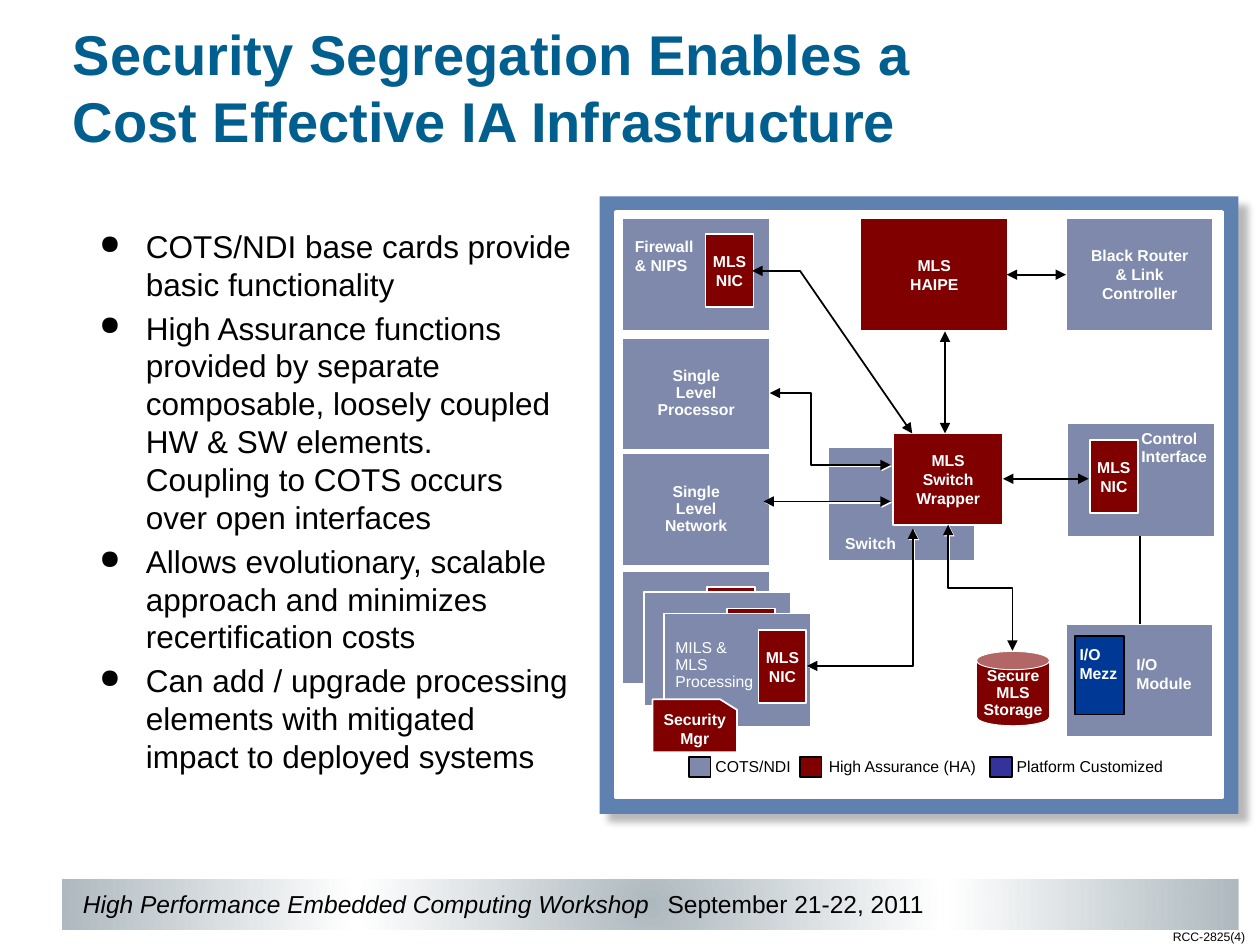
from dataclasses import dataclass

from lxml.etree import SubElement as Sub
from pptx import Presentation
from pptx.dml.color import RGBColor as Rgb
from pptx.enum.shapes import MSO_CONNECTOR as Conn, MSO_SHAPE as Kind
from pptx.enum.text import MSO_ANCHOR as Anchor, PP_ALIGN as Align
from pptx.oxml.ns import qn
from pptx.util import Inches, Pt

HUES = {
    "cots": "7E89AB", "high": "800000", "plat": "333399", "mezz": "003896",
    "frame": "5E81B0", "title": "005F8E", "steel": "AEB9BF",
    "white": "FFFFFF", "black": "000000",
}


@dataclass
class Box:
    """A filled shape or, without fill, a plain text box."""
    left: float
    top: float
    wide: float
    high: float
    fill: str = ""
    text: str = ""
    edge: str = "white"
    line: float = 1
    kind: Kind = Kind.RECTANGLE
    size: float = 9
    hue: str = "white"
    bold: bool = True
    align: Align = Align.LEFT
    mid: bool = False
    wrap: bool = True
    pad: tuple = (0.1, 0.05)
    space: float = 1


@dataclass
class Link:
    """A connector, given by its unrotated frame corners."""
    x1: float
    y1: float
    x2: float
    y2: float
    heads: bool = True
    glow: bool = False
    form: str = "line"
    turn: int = 0
    flip: bool = False
    bend: int = 50000


def tint(hue: str) -> Rgb:
    """Look up a colour."""
    return Rgb.from_string(HUES[hue])


def add_run(para, text: str, size: float, hue: str, bold=False, slant=False) -> None:
    """Add one styled run."""
    run = para.add_run()
    run.text = text
    font = run.font
    font.name, font.size, font.bold, font.italic = "Arial", Pt(size), bold, slant
    font.color.rgb = tint(hue)


def add_lines(para, text: str, size: float, hue: str, bold=False) -> None:
    """Add runs parted by line breaks."""
    for num, part in enumerate(text.split("\v")):
        if num:
            para.add_line_break()
        add_run(para, part, size, hue, bold)


def shade(shape, hue: str, alpha: int, blur: float, dist: float) -> None:
    """Cast an outer shadow to the lower right."""
    props = shape._element.spPr
    glow = props.find(qn("a:effectLst"))
    if glow is None:
        glow = Sub(props, qn("a:effectLst"))
    cast = Sub(glow, qn("a:outerShdw"), blurRad=str(Pt(blur)), dist=str(Pt(dist)),
               dir="2700000", algn="ctr", rotWithShape="0")
    color = Sub(cast, qn("a:srgbClr"), val=HUES[hue])
    Sub(color, qn("a:alpha"), val=str(alpha * 1000))


def add_box(shapes, box: Box):
    """Draw a box with its text."""
    frame = [Inches(v) for v in (box.left, box.top, box.wide, box.high)]
    if box.fill:
        shape = shapes.add_shape(box.kind, *frame)
        shape.shadow.inherit = False
        shape.fill.solid()
        shape.fill.fore_color.rgb = tint(box.fill)
        if box.edge:
            shape.line.color.rgb = tint(box.edge)
            shape.line.width = Pt(box.line)
        else:
            shape.line.fill.background()
    else:
        shape = shapes.add_textbox(*frame)
    body = shape.text_frame
    body.word_wrap = box.wrap
    body.vertical_anchor = Anchor.MIDDLE if box.mid else Anchor.TOP
    body.margin_left = body.margin_right = Inches(box.pad[0])
    body.margin_top = body.margin_bottom = Inches(box.pad[1])
    for num, row in enumerate(box.text.split("\n") if box.text else []):
        para = body.add_paragraph() if num else body.paragraphs[0]
        para.alignment, para.line_spacing = box.align, box.space
        add_lines(para, row, box.size, box.hue, box.bold)
    return shape


def ink(line, heads: bool) -> None:
    """Style a black line, with arrowheads if wanted."""
    line.color.rgb, line.width = tint("black"), Pt(1)
    if heads:
        for end in ("a:headEnd", "a:tailEnd"):
            Sub(line._get_or_add_ln(), qn(end), type="triangle")


def add_link(shapes, link: Link) -> None:
    """Draw a straight or bent connector."""
    ends = [Inches(v) for v in (link.x1, link.y1, link.x2, link.y2)]
    form = Conn.STRAIGHT if link.form == "line" else Conn.ELBOW
    wire = shapes.add_connector(form, *ends)
    props = wire._element.spPr
    if link.turn:
        props.xfrm.set("rot", str(link.turn * 60000))
    if link.flip:
        props.xfrm.set("flipV", "1")
    if link.form != "line":
        geom = props.find(qn("a:prstGeom"))
        geom.set("prst", link.form)
        if link.form == "bentConnector3":
            Sub(geom.find(qn("a:avLst")), qn("a:gd"), name="adj1", fmla=f"val {link.bend}")
    ink(wire.line, link.heads)
    Sub(props, qn("a:effectLst"))
    if link.glow:
        shade(wire, "white", 100, 0, 1)


def card(left: float, top: float, text="", fill="cots", high=0.9, **more) -> Box:
    """Describe a standard module card."""
    return Box(left, top, 1.17, high, fill, text, align=Align.CENTER, mid=True, wrap=False, **more)


def nic(left: float, top: float, text="MLS\nNIC") -> Box:
    """Describe a network card."""
    return Box(left, top, 0.38, 0.58, "high", text, align=Align.CENTER, mid=True, wrap=False)


def label(left: float, top: float, wide: float, text: str, **more) -> Box:
    """Describe a free label."""
    return Box(left, top, wide, 0.4, text=text, **more)


def add_foot(shapes) -> None:
    """Draw the footer band and its text."""
    band = add_box(shapes, Box(0.49, 6.98, 9.34, 0.4, "steel", edge=""))
    props = band._element.spPr
    solid = props.find(qn("a:solidFill"))
    grad = Sub(props, qn("a:gradFill"), rotWithShape="1")
    props.replace(solid, grad)
    stops = Sub(grad, qn("a:gsLst"))
    for pos, hue in ((0, "steel"), (50, "white"), (100, "steel")):
        stop = Sub(stops, qn("a:gs"), pos=str(pos * 1000))
        Sub(stop, qn("a:srgbClr"), val=HUES[hue])
    ring = Sub(grad, qn("a:path"), path="circle")
    Sub(ring, qn("a:fillToRect"), **dict.fromkeys("ltrb", "50000"))
    para = add_box(shapes, Box(0.56, 7.01, 7.03, 0.34)).text_frame.paragraphs[0]
    tabs = Sub(para._p.get_or_add_pPr(), qn("a:tabLst"))
    Sub(tabs, qn("a:tab"), pos=str(Inches(4.64)), algn="l")
    add_run(para, "High Performance Embedded Computing Workshop", 14, "black", slant=True)
    add_run(para, "\tSeptember 21-22, 2011", 14, "black")
    add_box(shapes, label(9.21, 7.33, 0.85, "RCC-2825(4)", size=7, hue="black", bold=False, wrap=False))


def add_points(shapes, points: list[str]) -> None:
    """Write the bullet list."""
    body = add_box(shapes, Box(0.69, 1.75, 3.97, 4.92)).text_frame
    for num, text in enumerate(points):
        para = body.add_paragraph() if num else body.paragraphs[0]
        if num:
            para.space_before = Pt(3.6)
        props = para._p.get_or_add_pPr()
        props.set("marL", str(Inches(0.37)))
        props.set("indent", str(-Inches(0.37)))
        Sub(Sub(props, qn("a:buClr")), qn("a:srgbClr"), val=HUES["black"])
        Sub(props, qn("a:buSzPct"), val="85000")
        Sub(props, qn("a:buChar"), char="●")
        add_lines(para, text, 18, "black")


def main() -> None:
    """Build the slide."""
    deck = Presentation()
    deck.slide_width, deck.slide_height = Inches(10), Inches(7.5)
    shapes = deck.slides.add_slide(deck.slide_layouts[6]).shapes
    add_foot(shapes)
    title = "Security Segregation Enables a\vCost Effective IA Infrastructure"
    add_box(shapes, Box(0.48, 0.13, 8.23, 1.12, text=title, size=32, hue="title", mid=True))
    add_points(shapes, [
        "COTS/NDI base cards provide basic functionality",
        "High Assurance functions provided by separate composable, loosely coupled "
        "HW & SW elements.\vCoupling to COTS occurs\vover open interfaces",
        "Allows evolutionary, scalable approach and minimizes recertification costs",
        "Can add / upgrade processing elements with mitigated impact to deployed systems",
    ])
    shade(add_box(shapes, Box(4.76, 1.56, 5.07, 4.9, "frame", edge="")), "black", 27, 4, 7)
    tight = {"pad": (0.05, 0.05), "space": 0.9}
    boxes = [
        Box(4.89, 1.68, 4.81, 4.65, "white", line=2),
        card(4.94, 1.73), nic(5.6, 1.86), label(4.94, 1.83, 0.67, "Firewall\v& NIPS"),
        card(4.94, 4.53), nic(5.61, 4.66, ""), card(5.11, 4.7), nic(5.77, 4.83, ""),
        card(5.27, 4.87), nic(6.02, 5),
        Box(5.31, 5.03, 0.67, 0.5, "cots", "MILS &\vMLS\nProcessing", edge="",
            bold=False, mid=True, wrap=False, **tight),
        card(8.47, 3.36), nic(8.65, 3.49), label(8.96, 3.35, 0.73, "Control\nInterface"),
        card(8.46, 1.73, "Black Router\n& Link\nController"),
        card(6.57, 3.55), label(6.61, 4.19, 0.61, "Switch"),
        Box(7.09, 3.44, 0.87, 0.73, "high", "MLS\vSwitch\vWrapper",
            align=Align.CENTER, mid=True, wrap=False),
        card(6.83, 1.73, "MLS\nHAIPE", "high"),
        Box(7.75, 5.17, 0.58, 0.59, "high", "Secure\nMLS\nStorage", line=0.5, kind=Kind.CAN,
            align=Align.CENTER, mid=True, wrap=False, space=0.9),
        card(8.46, 4.95), Box(8.53, 5.05, 0.39, 0.62, "mezz", edge="black"),
        label(8.47, 5.07, 0.53, "I/O\vMezz"), label(9.02, 5.2, 0.56, "I/O\vModule", pad=(0, 0)),
        card(4.94, 2.68, "Single\vLevel\vProcessor", high=0.89, **tight),
        card(4.94, 3.6, "Single\vLevel\vNetwork", high=0.89, **tight),
    ]
    for left, start, wide, fill, text in (
        (5.47, 5.58, 0.81, "cots", "COTS/NDI"),
        (6.35, 6.48, 1.44, "high", "High Assurance (HA)"),
        (7.86, 7.97, 1.44, "plat", "Platform Customized"),
    ):
        boxes += [Box(left, 6.01, 0.17, 0.16, fill, edge="black"),
                  label(start, 5.96, wide, text, hue="black", bold=False)]
    for box in boxes:
        add_box(shapes, box)
    guard = add_box(shapes, Box(5.18, 5.55, 0.67, 0.42, "high", "Security\nMgr", pad=(0, 0),
                                kind=Kind.FLOWCHART_CARD, align=Align.CENTER))
    guard._element.spPr.xfrm.set("flipH", "1")
    for link in (
        Link(7.5, 2.63, 7.5, 3.44), Link(7.99, 2.18, 8.46, 2.18), Link(7.96, 3.8, 8.64, 3.8),
        Link(9.05, 4.95, 9.05, 4.25, heads=False), Link(6.06, 3.98, 7.07, 3.98, glow=True),
        Link(6.28, 4.32, 7.37, 5.16, glow=True, form="bentConnector2", turn=90),
        Link(7.28, 4.41, 8.28, 4.92, glow=True, form="bentConnector3", turn=270, flip=True),
        Link(6.11, 3.12, 7.07, 3.69, glow=True, form="bentConnector3", bend=33800),
    ):
        add_link(shapes, link)
    pen = shapes.build_freeform(Inches(5.97), Inches(2.15))
    pen.add_line_segments([(Inches(6.35), Inches(2.15)), (Inches(7.24), Inches(3.44))], close=False)
    route = pen.convert_to_shape()
    route.shadow.inherit = False
    route.fill.background()
    ink(route.line, True)
    deck.save("out.pptx")


if __name__ == "__main__":
    main()
